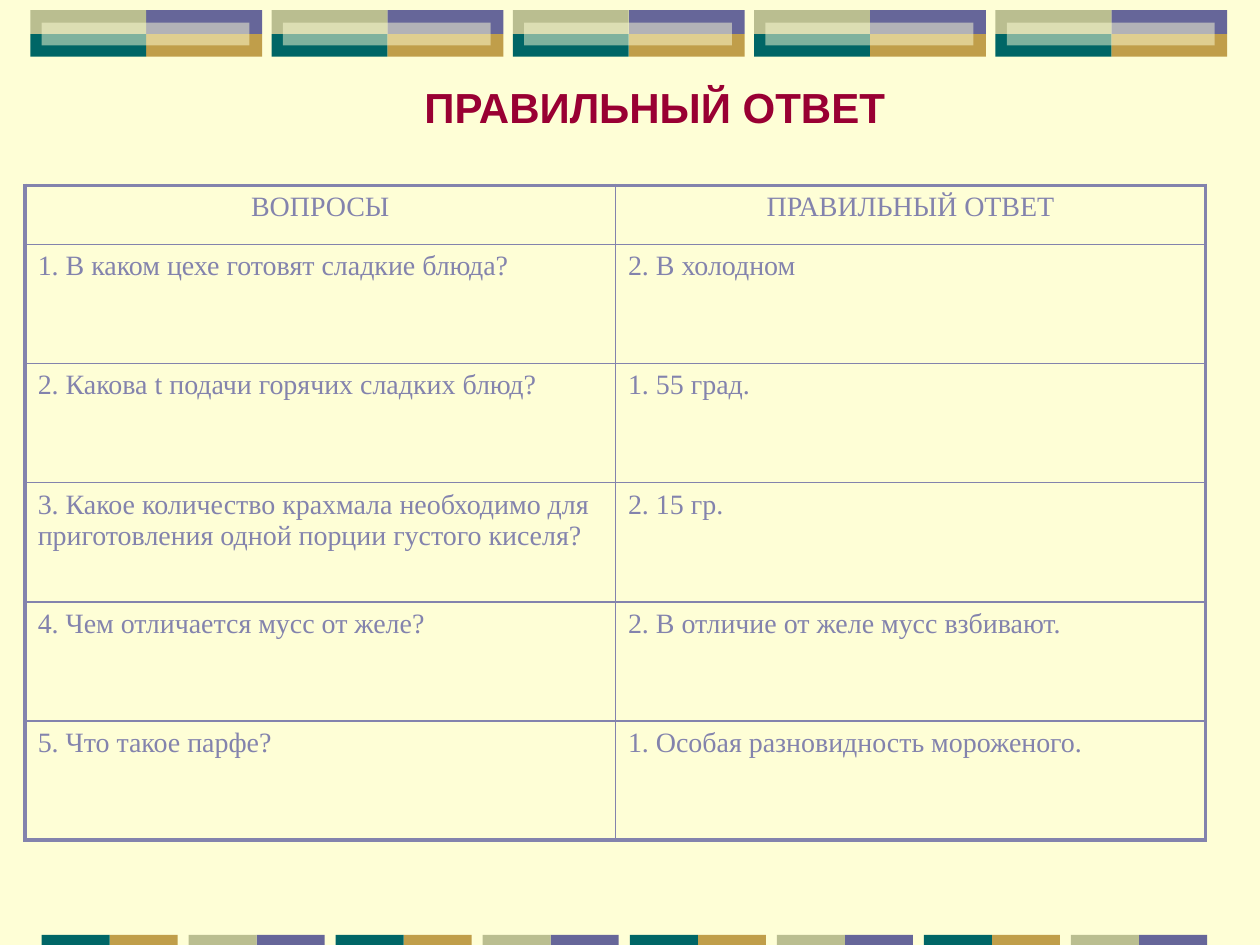
import lxml.etree
import pptx
import pptx.dml.color
import pptx.enum.shapes
import pptx.enum.text
import pptx.oxml.ns
import pptx.util

Inches = pptx.util.Inches
ALIGN = pptx.enum.text.PP_ALIGN

CREAM, PURPLE, GOLD, TEAL, OLIVE = "FEFED6", "666699", "C09E4A", "006666", "BABE90"
LAVENDER, CRIMSON = "8383AD", "990033"


def paint(fill, color):
    fill.solid()
    fill.fore_color.rgb = pptx.dml.color.RGBColor.from_string(color)


def write_text(frame, text, font="Times New Roman", size=16, color=LAVENDER,
               bold=False, align=ALIGN.LEFT):
    paragraph = frame.paragraphs[0]
    paragraph.alignment = align
    run = paragraph.add_run()
    run.text = text
    run.font.name = font
    run.font.size = pptx.util.Pt(size)
    run.font.bold = bold
    paint(run.font.fill, color)


presentation = pptx.Presentation()
presentation.slide_width = Inches(10)
presentation.slide_height = Inches(7.5)
slide = presentation.slides.add_slide(presentation.slide_layouts[6])
paint(slide.background.fill, CREAM)

# Decorative strips: left, top, width, height, color
rectangles = []
top_pitch = (7.9 - 0.24) / 4
for index in range(5):
    left = 0.24 + index * top_pitch
    rectangles += [
        (left + 0.92, 0.08, 0.92, 0.19, PURPLE),
        (left + 0.92, 0.27, 0.92, 0.18, GOLD),
        (left, 0.27, 0.92, 0.18, TEAL),
        (left, 0.08, 0.92, 0.19, OLIVE),
        (left + 0.09, 0.18, 1.65, 0.18, CREAM),
    ]
bottom_pitch = (8.5 - 0.33) / 7
for index in range(8):
    left = 0.33 + index * bottom_pitch
    first, second = (OLIVE, PURPLE) if index % 2 else (TEAL, GOLD)
    rectangles += [
        (left + 0.54, 7.42, 0.54, 0.08, second),
        (left, 7.42, 0.54, 0.08, first),
    ]

for left, top, width, height, color in rectangles:
    shape = slide.shapes.add_shape(
        pptx.enum.shapes.MSO_SHAPE.RECTANGLE,
        Inches(left), Inches(top), Inches(width), Inches(height))
    shape.shadow.inherit = False
    shape.line.fill.background()
    paint(shape.fill, color)
    if color == CREAM:  # the overlay is half transparent
        color_element = shape.fill._xPr.find(".//" + pptx.oxml.ns.qn("a:srgbClr"))
        lxml.etree.SubElement(color_element, pptx.oxml.ns.qn("a:alpha"), val="50000")

rows = [
    ("ВОПРОСЫ", "ПРАВИЛЬНЫЙ ОТВЕТ"),
    ("1. В каком цехе готовят сладкие блюда?", "2. В холодном"),
    ("2. Какова t подачи горячих сладких блюд?", "1. 55 град."),
    ("3. Какое количество крахмала необходимо для приготовления одной порции "
     "густого киселя?", "2. 15 гр."),
    ("4. Чем отличается мусс от желе?", "2. В отличие от желе мусс взбивают."),
    ("5. Что такое парфе?", "1. Особая разновидность мороженого."),
]
header_height, table_height = 0.47, 5.2
table = slide.shapes.add_table(
    len(rows), 2, Inches(0.2), Inches(1.47), Inches(9.37), Inches(table_height)).table
table.first_row = False
table.horz_banding = False
last_row = len(rows) - 1
for row_index, texts in enumerate(rows):
    is_header = row_index == 0
    height = header_height if is_header else (table_height - header_height) / last_row
    table.rows[row_index].height = Inches(height)
    for column_index, text in enumerate(texts):
        cell = table.cell(row_index, column_index)
        write_text(cell.text_frame, text, align=ALIGN.CENTER if is_header else ALIGN.LEFT)
        outer_sides = {
            "L": column_index == 0,
            "R": column_index == 1,
            "T": is_header,
            "B": row_index == last_row,
        }
        properties = cell._tc.get_or_add_tcPr()
        for side, is_outer in outer_sides.items():
            border = lxml.etree.SubElement(
                properties, pptx.oxml.ns.qn("a:ln" + side),
                w=str(pptx.util.Pt(2.25 if is_outer else 1)))
            border_fill = lxml.etree.SubElement(border, pptx.oxml.ns.qn("a:solidFill"))
            lxml.etree.SubElement(border_fill, pptx.oxml.ns.qn("a:srgbClr"), val=LAVENDER)
        cell.fill.background()

title = slide.shapes.add_textbox(Inches(3.27), Inches(0.6), Inches(3.89), Inches(0.5))
title.text_frame.word_wrap = False
title.text_frame.auto_size = pptx.enum.text.MSO_AUTO_SIZE.SHAPE_TO_FIT_TEXT
write_text(title.text_frame, "ПРАВИЛЬНЫЙ ОТВЕТ", font="Arial", size=24,
           color=CRIMSON, bold=True)

presentation.save("out.pptx")
